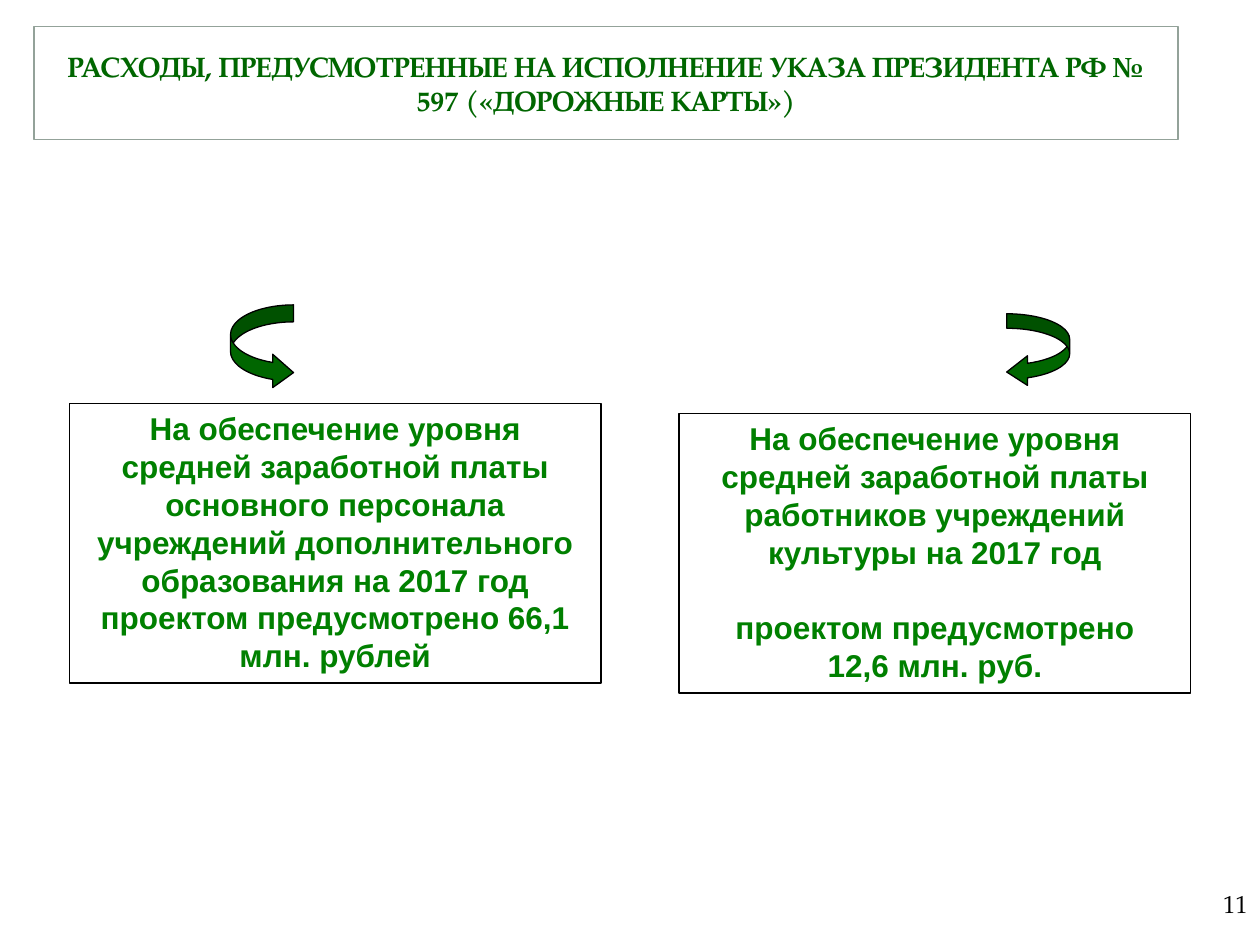
from pptx import Presentation
from pptx.dml.color import RGBColor
from pptx.enum.shapes import MSO_SHAPE as Shape
from pptx.enum.text import MSO_ANCHOR as Anchor, PP_ALIGN as Align
from pptx.util import Inches, Pt

WHITE = RGBColor(0xFF, 0xFF, 0xFF)
BLACK = RGBColor(0, 0, 0)
GRAY = RGBColor(0x93, 0xA2, 0x99)
DARK_GREEN = RGBColor(0, 0x66, 0)
GREEN = RGBColor(0, 0x80, 0)
SERIF = "TeX Gyre Pagella"
LINE_PITCH = Pt(21.6)

TITLE = "РАСХОДЫ, ПРЕДУСМОТРЕННЫЕ НА ИСПОЛНЕНИЕ УКАЗА ПРЕЗИДЕНТА РФ № 597 («ДОРОЖНЫЕ КАРТЫ»)"
EDUCATION = [
    "На обеспечение уровня средней заработной платы основного персонала "
    "учреждений дополнительного образования на 2017 год",
    "проектом предусмотрено 66,1 млн. рублей",
]
CULTURE = [
    "На обеспечение уровня средней заработной платы "
    "работников учреждений культуры на 2017 год",
    "проектом предусмотрено",
    "12,6 млн. руб.",
]


def place(shape, left, top, width, height):
    shape.left, shape.top = Inches(left), Inches(top)
    shape.width, shape.height = Inches(width), Inches(height)


def outline(shape, color):
    shape.line.color.rgb = color
    shape.line.width = Pt(0.75)


def format_text(text_frame, font_name, size, color, bold, align):
    for paragraph in text_frame.paragraphs:
        paragraph.alignment = align
        for run in paragraph.runs:
            run.font.name = font_name
            run.font.size = Pt(size)
            run.font.bold = bold
            run.font.color.rgb = color


def set_title(slide):
    title = slide.shapes.title
    place(title, 0.27, 0.21, 9.08, 0.9)
    outline(title, GRAY)
    title.text_frame.text = TITLE
    title.text_frame.vertical_anchor = Anchor.MIDDLE
    format_text(title.text_frame, SERIF, 16, DARK_GREEN, True, Align.CENTER)


def add_outlined(slide, kind, box, fill):
    shape = slide.shapes.add_shape(kind, *map(Inches, box))
    shape.shadow.inherit = False
    shape.fill.solid()
    shape.fill.fore_color.rgb = fill
    outline(shape, BLACK)
    return shape


def add_arrow(slide, kind, box, adjustments):
    arrow = add_outlined(slide, kind, box, DARK_GREEN)
    for index, value in enumerate(adjustments):
        arrow.adjustments[index] = value


def add_card(slide, box, lines, gap=0):
    card = add_outlined(slide, Shape.RECTANGLE, box, WHITE)
    text_frame = card.text_frame
    text_frame.text = "\n".join(lines)
    text_frame.word_wrap = True
    text_frame.vertical_anchor = Anchor.TOP
    format_text(text_frame, "Arial", 18, GREEN, True, Align.CENTER)
    for paragraph in text_frame.paragraphs:
        paragraph.line_spacing = LINE_PITCH
    text_frame.paragraphs[1].space_before = gap


def add_page_number(slide, number):
    text_box = slide.shapes.add_textbox(*map(Inches, (7.92, 6.92, 2.08, 0.5)))
    text_frame = text_box.text_frame
    text_frame.text = number
    text_frame.word_wrap = True
    text_frame.vertical_anchor = Anchor.MIDDLE
    format_text(text_frame, SERIF, 14, BLACK, False, Align.RIGHT)


def main():
    presentation = Presentation()
    presentation.slide_width, presentation.slide_height = Inches(10), Inches(7.5)
    slide = presentation.slides.add_slide(presentation.slide_layouts[5])
    add_page_number(slide, "11")
    set_title(slide)
    add_arrow(slide, Shape.CURVED_RIGHT_ARROW, (1.83, 2.42, 0.5, 0.67), (0.27, 0.53, 0.33))
    add_arrow(slide, Shape.CURVED_LEFT_ARROW, (7.99, 2.49, 0.5, 0.58), (0.23, 0.47, 0.33))
    add_card(slide, (0.55, 3.2, 4.22, 2.22), EDUCATION)
    add_card(slide, (5.39, 3.28, 4.06, 2.22), CULTURE, gap=LINE_PITCH)
    presentation.save("out.pptx")


if __name__ == "__main__":
    main()
